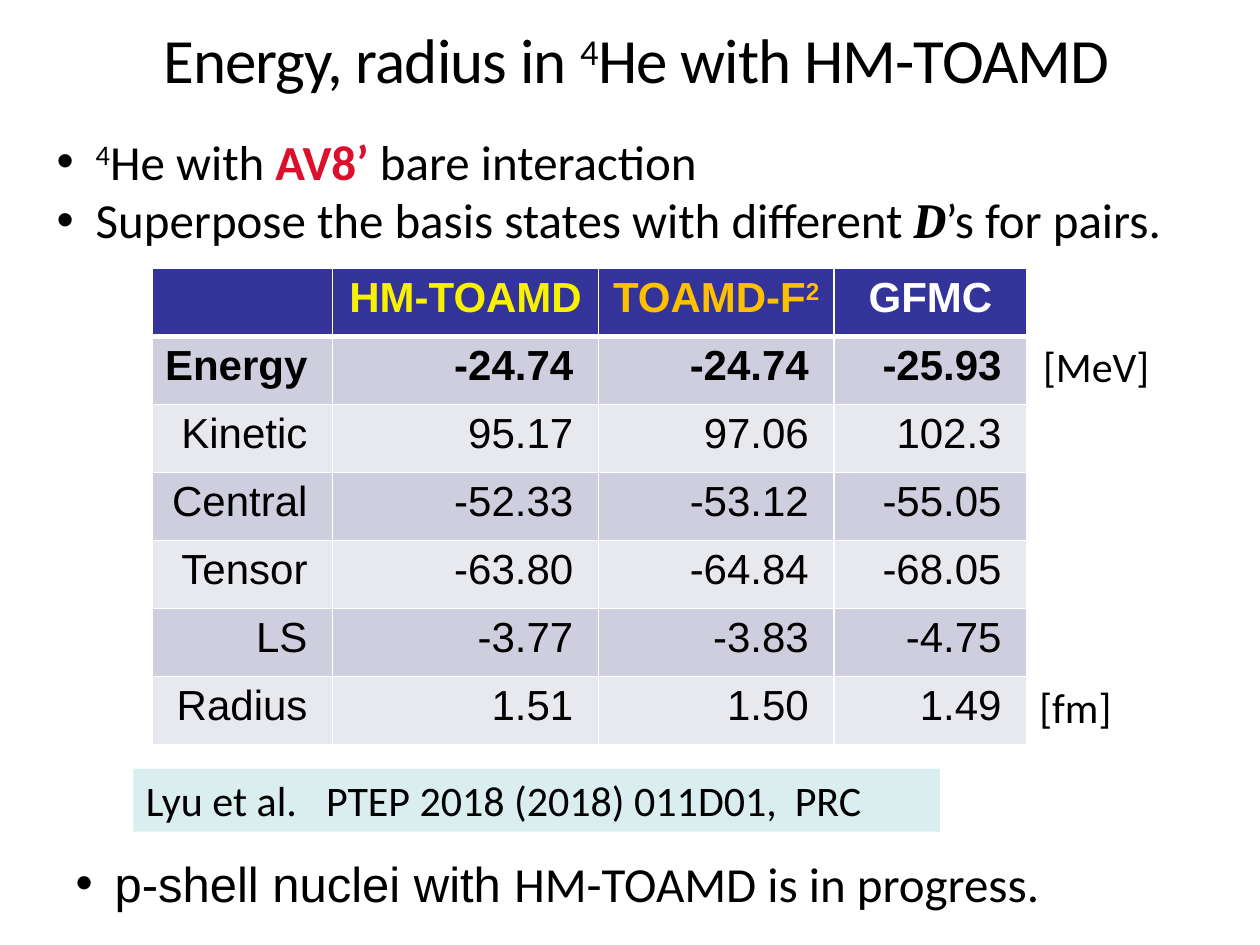
from lxml.etree import SubElement
from pptx import Presentation
from pptx.dml.color import RGBColor
from pptx.enum.shapes import MSO_SHAPE
from pptx.enum.text import MSO_ANCHOR, MSO_AUTO_SIZE, PP_ALIGN
from pptx.oxml.ns import qn
from pptx.util import Inches, Pt

BLACK = RGBColor(0x00, 0x00, 0x00)
WHITE = RGBColor(0xFF, 0xFF, 0xFF)
RED = RGBColor(0xDC, 0x0F, 0x2D)
YELLOW = RGBColor(0xF8, 0xF2, 0x00)
ORANGE = RGBColor(0xFF, 0xC0, 0x00)
NAVY = RGBColor(0x33, 0x33, 0x99)
BANDS = [RGBColor(0xCE, 0xCE, 0xDE), RGBColor(0xE8, 0xE8, 0xEF)]
PALE_TEAL = RGBColor(0xDA, 0xED, 0xEF)

# Content: each run is (text, format that differs from its paragraph)
SUPER = {"raised": True}
TITLE = [("Energy, radius in ", {}), ("4", SUPER), ("He with HM-TOAMD", {})]
SETUP = [
    [("4", SUPER), ("He with ", {}), ("AV8’", {"color": RED, "bold": True}),
     (" bare interaction", {})],
    [("Superpose the basis states with different ", {}),
     ("D", {"font": "Cambria", "bold": True, "italic": True}), ("’s for pairs.", {})],
]
OUTLOOK = [[("p-shell nuclei with ", {"font": "Arial"}), ("HM-TOAMD is in progress.", {})]]
CITATION = [("Lyu et al.\tPTEP 2018 (2018) 011D01,\tPRC", {})]
CITATION_TABS = [1.43, 5.15]
METHODS = [
    [],
    [("HM-TOAMD", {"color": YELLOW})],
    [("TOAMD-F", {"color": ORANGE}), ("2", {"color": ORANGE, "raised": True})],
    [("GFMC", {"color": WHITE})],
]
RESULTS = [
    ("Energy", "-24.74", "-24.74", "-25.93"),
    ("Kinetic", "95.17", "97.06", "102.3"),
    ("Central", "-52.33", "-53.12", "-55.05"),
    ("Tensor", "-63.80", "-64.84", "-68.05"),
    ("LS", "-3.77", "-3.83", "-4.75"),
    ("Radius", "1.51", "1.50", "1.49"),
]
UNITS = [("[MeV]", 8.18, 2.65, 1.06), ("[fm]", 8.15, 5.36, 0.78)]
COLUMN_WIDTHS = [1.43, 2.11, 1.87, 1.53]
TABLE_LEFT, TABLE_TOP, ROW_HEIGHT = 1.21, 2.13, 0.54


def add_text(paragraph, text, font="Calibri", size=24, color=BLACK, bold=False,
             italic=False, raised=False, spacing=None):
    run = paragraph.add_run()
    run.text = text
    run.font.name, run.font.size = font, Pt(size)
    run.font.bold, run.font.italic = bold, italic
    run.font.color.rgb = color
    if raised:
        run.font._element.set("baseline", "30000")
    if spacing is not None:
        run.font._element.set("spc", str(int(spacing * 100)))


def add_runs(paragraph, runs, **base):
    for text, changes in runs:
        add_text(paragraph, text, **{**base, **changes})


def place(shape, left, top, width, height):
    shape.left, shape.top = Inches(left), Inches(top)
    shape.width, shape.height = Inches(width), Inches(height)
    shape.text_frame.auto_size = MSO_AUTO_SIZE.NONE


def fill_list(body, items, box, space_before=0):
    place(body, *box)
    frame = body.text_frame
    for i, runs in enumerate(items):
        paragraph = frame.add_paragraph() if i else frame.paragraphs[0]
        paragraph.space_before = Pt(space_before)
        properties = paragraph._p.get_or_add_pPr()
        properties.set("marL", str(Inches(0.31)))
        properties.set("indent", str(-Inches(0.31)))
        add_runs(paragraph, runs, size=28)


def add_header_borders(cell):
    # Borders go before the fill, so call this first
    properties = cell._tc.get_or_add_tcPr()
    for side, width in (("lnL", 1), ("lnR", 1), ("lnT", 1), ("lnB", 3)):
        line = SubElement(properties, qn(f"a:{side}"), w=str(Pt(width)))
        paint = SubElement(line, qn("a:solidFill"))
        SubElement(paint, qn("a:srgbClr"), val=str(WHITE))


def paint_cell(cell, color):
    cell.fill.solid()
    cell.fill.fore_color.rgb = color


prs = Presentation()
prs.slide_width, prs.slide_height = Inches(10), Inches(7.5)
slide = prs.slides.add_slide(prs.slide_layouts[3])
title, setup, outlook = slide.placeholders

# Title and bullet lists
place(title, 0, 0.21, 10, 0.59)
heading = title.text_frame.paragraphs[0]
heading.alignment = PP_ALIGN.CENTER
heading.line_spacing = 0.9
heading._p.get_or_add_pPr().set("marL", str(Inches(0.1)))
add_runs(heading, TITLE, size=36, spacing=-0.5)
fill_list(setup, SETUP, (0.35, 0.99, 9.11, 1.04))
fill_list(outlook, OUTLOOK, (0.5, 6.72, 8.36, 0.57), space_before=6)

# Citation bar
bar = slide.shapes.add_shape(MSO_SHAPE.RECTANGLE, 0, 0, 0, 0)
place(bar, 1.06, 6.1, 6.4, 0.5)
bar.shadow.inherit = False
bar.fill.solid()
bar.fill.fore_color.rgb = PALE_TEAL
bar.line.fill.background()
bar.text_frame.vertical_anchor = MSO_ANCHOR.TOP
citation = bar.text_frame.paragraphs[0]
citation.alignment = PP_ALIGN.LEFT
stops = SubElement(citation._p.get_or_add_pPr(), qn("a:tabLst"))
for position in CITATION_TABS:
    SubElement(stops, qn("a:tab"), pos=str(Inches(position)), algn="l")
add_runs(citation, CITATION)

# Units beside the table
for unit, left, top, width in UNITS:
    label = slide.shapes.add_textbox(0, 0, 0, 0)
    place(label, left, top, width, 0.5)
    label.text_frame.word_wrap = False
    add_text(label.text_frame.paragraphs[0], unit)

# Results table
row_count = len(RESULTS) + 1
table = slide.shapes.add_table(
    row_count, len(METHODS), Inches(TABLE_LEFT), Inches(TABLE_TOP),
    Inches(sum(COLUMN_WIDTHS)), Inches(ROW_HEIGHT * row_count)).table
for column, width in zip(table.columns, COLUMN_WIDTHS):
    column.width = Inches(width)
for row in table.rows:
    row.height = Inches(ROW_HEIGHT)
for c, runs in enumerate(METHODS):
    cell = table.cell(0, c)
    add_header_borders(cell)
    paint_cell(cell, NAVY)
    method = cell.text_frame.paragraphs[0]
    method.alignment = PP_ALIGN.CENTER
    add_runs(method, runs, font="Arial", bold=True)
for r, values in enumerate(RESULTS):
    for c, value in enumerate(values):
        cell = table.cell(r + 1, c)
        paint_cell(cell, BANDS[r % 2])
        cell.margin_right = Inches(0.2)
        entry = cell.text_frame.paragraphs[0]
        entry.alignment = PP_ALIGN.RIGHT
        add_text(entry, value, font="Arial", bold=r == 0)

prs.save("out.pptx")
